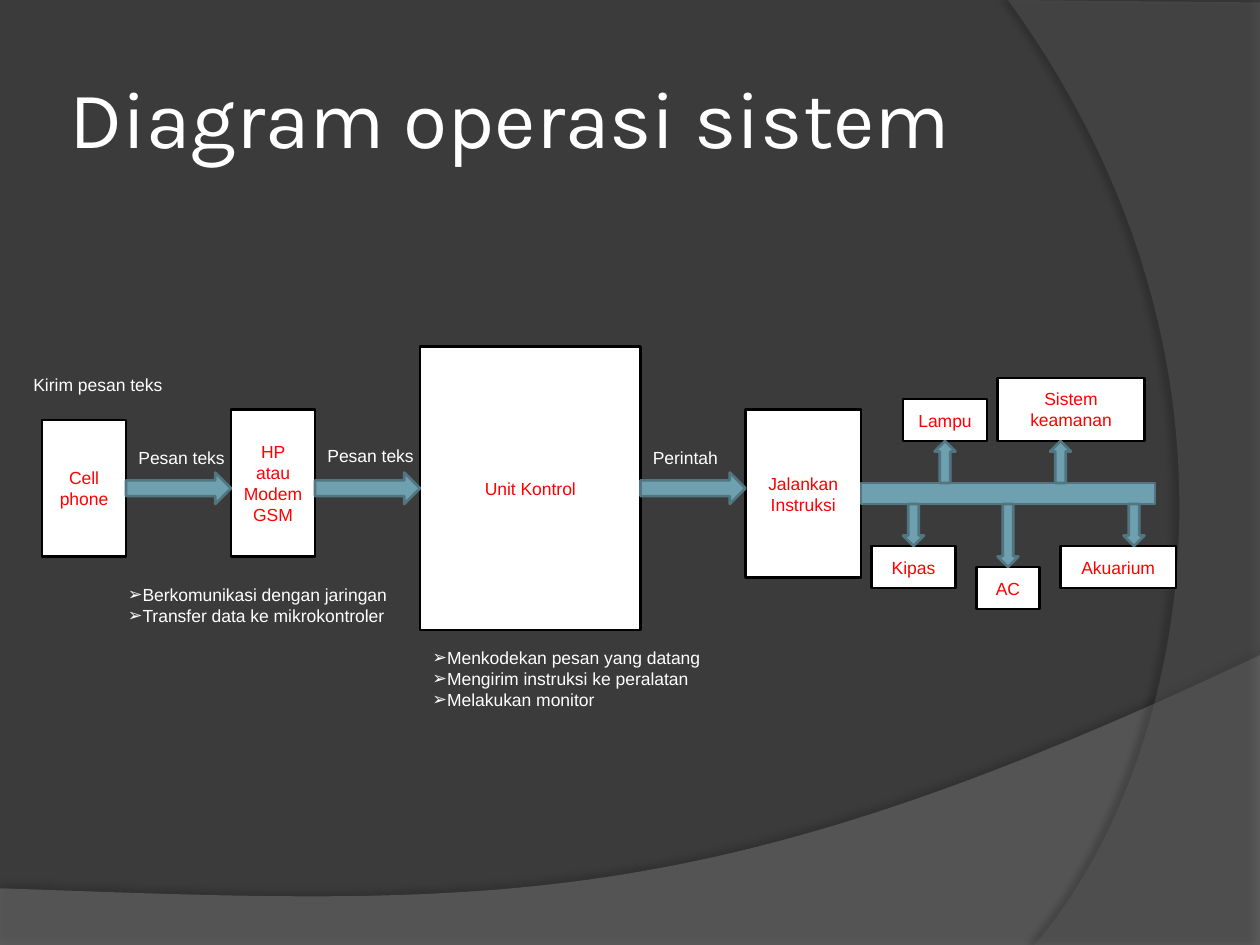
"""Build the system operation diagram slide on a grid of twelfths of an inch."""
from lxml.etree import SubElement
from pptx import Presentation
from pptx.dml.color import RGBColor
from pptx.enum.shapes import MSO_SHAPE as Shape
from pptx.enum.text import MSO_ANCHOR as Anchor, MSO_AUTO_SIZE as Auto, PP_ALIGN as Align
from pptx.oxml.ns import qn
from pptx.util import Inches, Pt

THEME = dict(
    back="3B3B3B", white="FFFFFF", black="000000", red="FF0000",
    blue="6EA0B0", edge="517682", font="Arial", head="Karla",
    size=10, title=46, line=1.5,
)
TITLE = "Diagram operasi sistem"
STAGES = [
    ("Cell phone", 4, 40, 8, 13),
    ("HP atau\nModem GSM", 22, 39, 8, 14),
    ("Unit Kontrol", 40, 33, 21, 27),
    ("Jalankan Instruksi", 71, 39, 11, 16),
]
DEVICES = [
    ("Kipas", 83, 52, 8, 4, 87),
    ("Sistem keamanan", 95, 36, 14, 6, 101),
    ("AC", 93, 54, 6, 4, 96),
    ("Akuarium", 101, 52, 11, 4, 108),
    ("Lampu", 86, 38, 8, 4, 90),
]
BUS = (82, 46, 28, 2)
FLOWS = [("Pesan teks", 42, 10.7), ("Pesan teks", 41.8, 10.7), ("Perintah", 42, 8.6)]
FLOW_TOP, FLOW_TALL, TAP_WIDE = 45, 3, 2
CAPTION = ("Kirim pesan teks", 2, 35, 14.8, 3.2)
LISTS = [
    ("Berkomunikasi dengan jaringan\nTransfer data ke mikrokontroler", 11, 55, 27.2, 5.3),
    ("Menkodekan pesan yang datang\nMengirim instruksi ke peralatan\nMelakukan monitor",
     40, 61, 28, 7.3),
]
WAVES = [
    dict(lead=[(0, 7.05), (0, 7.5), (10, 7.5)],
         curve=[(10, 5.2), (5.59, 7.29), (3.91, 7.19), (0, 7.05)],
         fill="7F7F7F", alpha=45, shade=35, dist=3.5, turn=270),
    dict(lead=[(10, 0.02), (10, 7.5)],
         curve=[(8.21, 7.5), (9.35, 6.19), (10.18, 3), (8, 0)],
         fill="5E5E5E", alpha=40, shade=45, dist=4, turn=180),
]


def rgb(name):
    return RGBColor.from_string(THEME.get(name, name))


def grid(*cells):
    return [Inches(cell / 12) for cell in cells]


def write(frame, text, color="white", font="font", size="size", align=Align.LEFT,
          anchor=Anchor.TOP, wrap=True, bullet=None):
    frame.text = text
    frame.word_wrap = wrap
    frame.auto_size = Auto.NONE if wrap else Auto.SHAPE_TO_FIT_TEXT
    frame.vertical_anchor = anchor
    for para in frame.paragraphs:
        para.alignment = align
        para.font.name = THEME[font]
        para.font.size = Pt(THEME[size])
        para.font.color.rgb = rgb(color)
        if bullet:
            props = para._p.get_or_add_pPr()
            props.set("marL", "0")
            props.set("indent", "0")
            SubElement(props, qn("a:buFont"), typeface=THEME["font"])
            SubElement(props, qn("a:buChar"), char=bullet)


def block(slide, kind, cells, fill="blue", edge="edge"):
    shape = slide.shapes.add_shape(kind, *grid(*cells))
    shape.shadow.inherit = False
    shape.fill.solid()
    shape.fill.fore_color.rgb = rgb(fill)
    shape.line.color.rgb = rgb(edge)
    shape.line.width = Pt(THEME["line"])
    return shape


def box(slide, text, *cells):
    shape = block(slide, Shape.RECTANGLE, cells, "white", "black")
    write(shape.text_frame, text, color="red", align=Align.CENTER, anchor=Anchor.MIDDLE)


def note(slide, text, *cells, bullet=None):
    area = slide.shapes.add_textbox(*grid(*cells))
    write(area.text_frame, text, wrap=False, bullet=bullet)


def bend(curve, steps=60):
    for step in range(steps + 1):
        t = step / steps
        parts = ((1 - t) ** 3, 3 * t * (1 - t) ** 2, 3 * t * t * (1 - t), t ** 3)
        yield tuple(sum(w * p[axis] for w, p in zip(parts, curve)) for axis in (0, 1))


def wave(slide, lead, curve, fill, alpha, shade, dist, turn):
    dots = [(Inches(x), Inches(y)) for x, y in [*lead, *bend(curve)]]
    pen = slide.shapes.build_freeform(*dots[0])
    pen.add_line_segments(dots[1:], close=True)
    shape = pen.convert_to_shape()
    shape.fill.solid()
    shape.fill.fore_color.rgb = rgb(fill)
    shape.line.fill.background()
    shape.shadow.inherit = False
    props = shape._element.spPr
    tint = props.find(qn("a:solidFill"))[0]
    SubElement(tint, qn("a:alpha"), val=str(alpha * 1000))
    cast = SubElement(props.find(qn("a:effectLst")), qn("a:outerShdw"),
                      blurRad=str(Pt(4)), dist=str(Pt(dist)), dir=str(turn * 60000),
                      algn="ctr", rotWithShape="0")
    dark = SubElement(cast, qn("a:srgbClr"), val=THEME["black"])
    SubElement(dark, qn("a:alpha"), val=str(shade * 1000))


def tap(slide, top, tall, mid):
    bus_top, bus_tall = BUS[1], BUS[3]
    above = top < bus_top
    start, end = (top + tall, bus_top) if above else (bus_top + bus_tall, top)
    cells = (mid - TAP_WIDE / 2, start, TAP_WIDE, end - start)
    block(slide, Shape.DOWN_ARROW, cells).rotation = 180 if above else 0


def main():
    deck = Presentation()
    deck.slide_width, deck.slide_height = Inches(10), Inches(7.5)
    slide = deck.slides.add_slide(deck.slide_layouts[5])
    slide.background.fill.solid()
    slide.background.fill.fore_color.rgb = rgb("back")
    for item in WAVES:
        wave(slide, **item)

    title = slide.shapes.title
    title.left, title.top, title.width, title.height = map(Inches, (0.5, 0.3, 8.17, 1.25))
    write(title.text_frame, TITLE, font="head", size="title", anchor=Anchor.MIDDLE)
    frame = title.text_frame
    frame.margin_left = frame.margin_right = Inches(0.05)
    slide.shapes._spTree.append(title._element)

    for stage in STAGES:
        box(slide, *stage)
    for text, left, top, wide, tall, mid in DEVICES:
        box(slide, text, left, top, wide, tall)
    block(slide, Shape.RECTANGLE, BUS)
    for text, left, top, wide, tall, mid in DEVICES:
        tap(slide, top, tall, mid)
    for (text, top, wide), a, b in zip(FLOWS, STAGES, STAGES[1:]):
        left = a[1] + a[3]
        block(slide, Shape.RIGHT_ARROW, (left, FLOW_TOP, b[1] - left, FLOW_TALL))
        note(slide, text, left, top, wide, 3.2)
    note(slide, *CAPTION)
    for item in LISTS:
        note(slide, *item, bullet="➢")
    deck.save("out.pptx")


if __name__ == "__main__":
    main()
